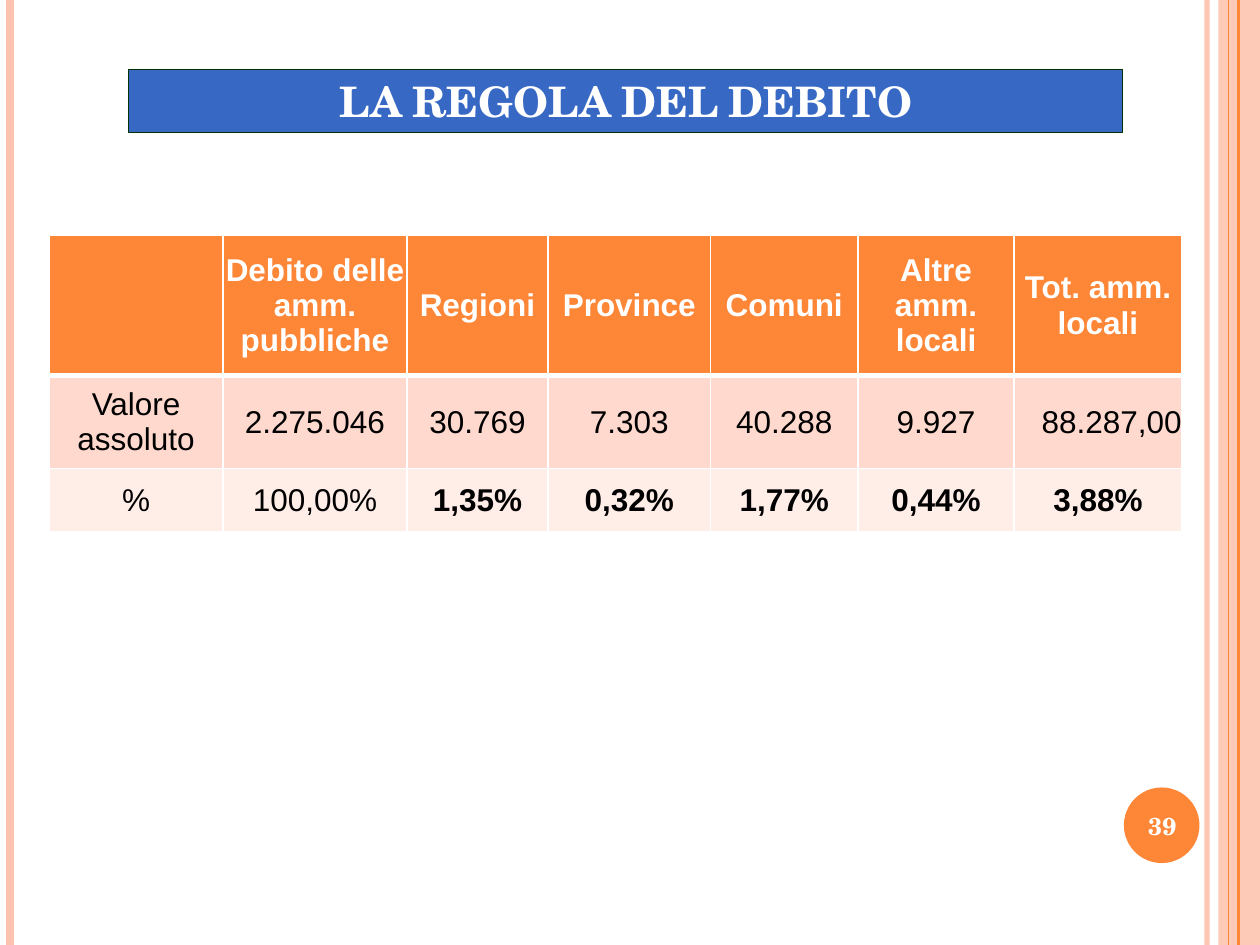
"""Build the slide on the debt rule, with its table of local debt."""
from lxml.etree import SubElement as Sub
from pptx import Presentation
from pptx.dml.color import RGBColor
from pptx.enum.shapes import MSO_CONNECTOR as Conn, MSO_SHAPE as Kind
from pptx.enum.text import MSO_ANCHOR as Anchor, PP_ALIGN as Align
from pptx.oxml import parse_xml
from pptx.oxml.ns import nsdecls, qn
from pptx.util import Inches, Pt

WHITE, BLACK, ORANGE, PEACH = "FFFFFF", "000000", "FE8637", "FEC3AE"
SERIF = "TeX Gyre Schola"


def paint(fill, tone, alpha=100):
    fill.solid()
    fill.fore_color.rgb = RGBColor.from_string(tone)
    if alpha < 100:
        color = fill._xPr.find(qn("a:solidFill"))[0]
        Sub(color, qn("a:alpha")).set("val", str(alpha * 1000))


def write(frame, text, face, size, tone, bold, align=Align.CENTER):
    frame.text = text
    para = frame.paragraphs[0]
    para.alignment = align
    font = para.runs[0].font
    font.name, font.size, font.bold = face, Pt(size), bold
    paint(font.fill, tone)
    return font


deck = Presentation()
deck.slide_width, deck.slide_height = Inches(10), Inches(7.5)
slide = deck.slides.add_slide(deck.slide_layouts[6])
shapes = slide.shapes

band = shapes.add_shape(Kind.RECTANGLE, Inches(9.67), 0, Inches(0.33), deck.slide_height)
paint(band.fill, PEACH, 87)
band.line.fill.background()
band.shadow.inherit = False

for x, tone, width, alpha in [
    (9.58, PEACH, 3, 93),
    (0.08, PEACH, 4.5, 100),
    (9.83, ORANGE, 1.5, 100),
    (9.75, ORANGE, 0.75, 100),
]:
    rule = shapes.add_connector(Conn.STRAIGHT, Inches(x), 0, Inches(x), deck.slide_height)
    rule.line.width = Pt(width)
    paint(rule.line.fill, tone, alpha)
    Sub(rule._element.spPr, qn("a:effectLst"))
    if tone == PEACH:
        band._element.addprevious(rule._element)

disc = shapes.add_shape(Kind.OVAL, Inches(8.92), Inches(6.25), Inches(0.6), Inches(0.6))
paint(disc.fill, ORANGE)
disc.line.fill.background()
disc.shadow.inherit = False

title = shapes.add_shape(Kind.RECTANGLE, Inches(1.02), Inches(0.55), Inches(7.89), Inches(0.5))
paint(title.fill, "3668C4")
paint(title.line.fill, "003300")
title.line.width = Pt(0.75)
title.shadow.inherit = False
title.text_frame.vertical_anchor = Anchor.BOTTOM
font = write(title.text_frame, "LA REGOLA DEL DEBITO", SERIF, 24, WHITE, True)
font._element.set("cap", "small")

data = [
    ["", "Debito delle amm. pubbliche", "Regioni", "Province", "Comuni",
     "Altre amm. locali", "Tot. amm. locali"],
    ["Valore assoluto", "2.275.046", "30.769", "7.303", "40.288", "9.927", "88.287,00"],
    ["%", "100,00%", "1,35%", "0,32%", "1,77%", "0,44%", "3,88%"],
]
cols = [1.38, 1.46, 1.12, 1.29, 1.17, 1.24, 1.33]
rows = [1.11, 0.74, 0.5]
tones = [ORANGE, "FFD9CE", "FFEDE8"]

table = shapes.add_table(len(rows), len(cols), Inches(0.39), Inches(1.87),
                         Inches(sum(cols)), Inches(sum(rows))).table
table.horz_banding = False
for col, width in zip(table.columns, cols):
    col.width = Inches(width)
for row, height in zip(table.rows, rows):
    row.height = Inches(height)

for r, line in enumerate(data):
    for c, text in enumerate(line):
        cell = table.cell(r, c)
        cell.margin_left = cell.margin_right = cell.margin_top = cell.margin_bottom = 0
        cell.vertical_anchor = Anchor.MIDDLE
        for side in "LRTB":
            thick = 3 if (r, side) in [(0, "B"), (1, "T")] else 1
            cell._tc.get_or_add_tcPr().append(parse_xml(
                f'<a:ln{side} {nsdecls("a")} w="{Pt(thick)}"><a:solidFill>'
                f'<a:srgbClr val="{WHITE}"/></a:solidFill></a:ln{side}>'))
        paint(cell.fill, tones[r])
        if text:
            bold = r == 0 or (r == 2 and c > 1)
            align = Align.RIGHT if (r, c) == (1, 6) else Align.CENTER
            write(cell.text_frame, text, "Arial", 18, BLACK if r else WHITE, bold, align)

page = shapes.add_textbox(Inches(8.89), Inches(6.27), Inches(0.67), Inches(0.57))
page.text_frame.word_wrap = True
page.text_frame.vertical_anchor = Anchor.MIDDLE
write(page.text_frame, "39", SERIF, 14, WHITE, True)

deck.save("out.pptx")
